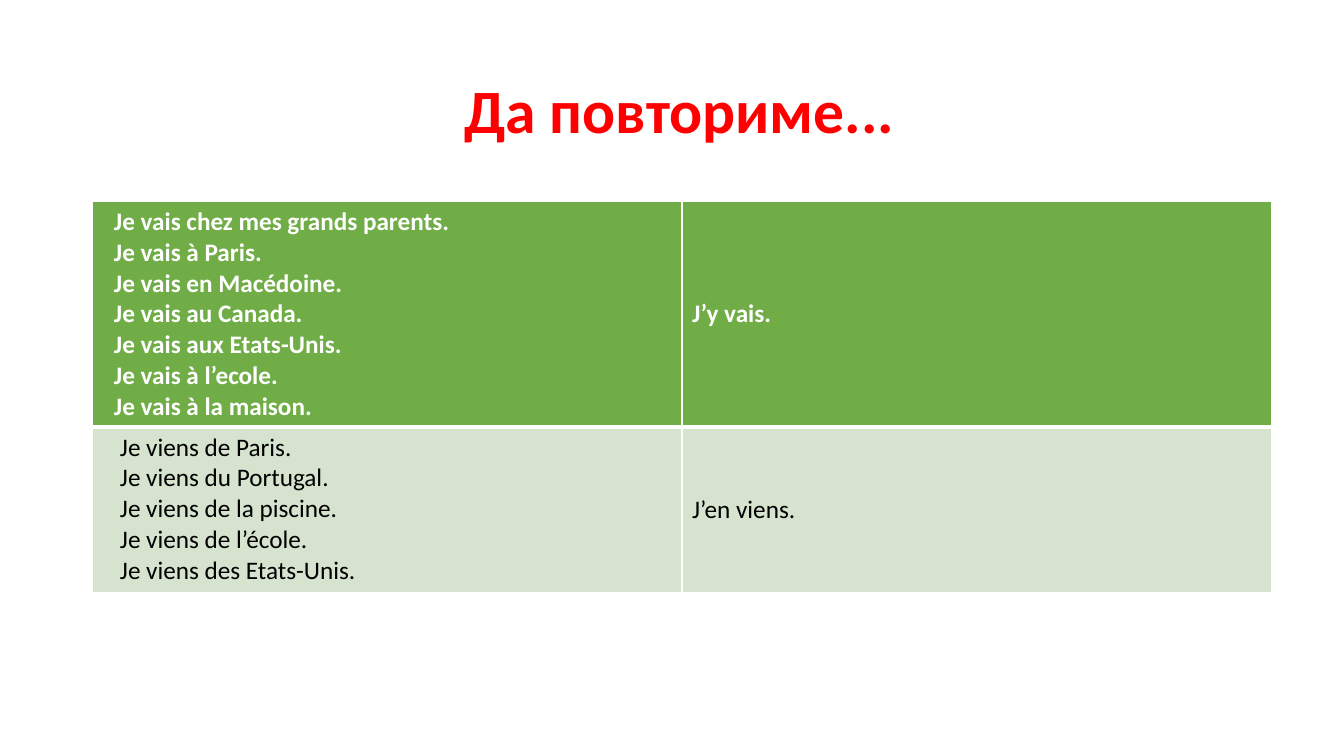
from dataclasses import dataclass

import pptx
import pptx.dml.color
import pptx.enum.text
import pptx.oxml
import pptx.oxml.ns
import pptx.util
from pptx.util import Inches


@dataclass(frozen=True)
class Theme:
    font: str = "Calibri"
    title_size: int = 44
    body_size: int = 18
    red: str = "FF0000"
    white: str = "FFFFFF"
    black: str = "000000"
    green: str = "70AD47"
    pale_green: str = "D5E3CF"


THEME = Theme()


def format_text(frame, size, color, bold, indent):
    """Format every paragraph of a text frame, with a left indent in inches."""
    for para in frame.paragraphs:
        para._p.get_or_add_pPr().set("marL", str(Inches(indent)))
        for span in para.runs:
            span.font.name = THEME.font
            span.font.size = pptx.util.Pt(size)
            span.font.bold = bold
            span.font.color.rgb = pptx.dml.color.RGBColor.from_string(color)


def add_borders(cell, widths):
    """Draw white cell borders; widths maps left, right, top, bottom tags to points."""
    properties = cell._tc.get_or_add_tcPr()
    for position, (side, width) in enumerate(widths.items()):
        border = pptx.oxml.parse_xml(
            f'<a:{side} {pptx.oxml.ns.nsdecls("a")} w="{pptx.util.Pt(width)}">'
            f'<a:solidFill><a:srgbClr val="{THEME.white}"/></a:solidFill></a:{side}>'
        )
        properties.insert(position, border)


deck = pptx.Presentation()
deck.slide_width, deck.slide_height = Inches(13.33), Inches(7.5)
page = deck.slides.add_slide(deck.slide_layouts[5])

# Title
title = page.shapes.title
title.left, title.top = Inches(0.92), Inches(0.4)
title.width, title.height = Inches(11.5), Inches(1.45)
title.text_frame.text = "Да повториме..."
title.text_frame.vertical_anchor = pptx.enum.text.MSO_ANCHOR.MIDDLE
heading = title.text_frame.paragraphs[0]
heading.alignment = pptx.enum.text.PP_ALIGN.CENTER
heading.line_spacing = 0.9
format_text(title.text_frame, THEME.title_size, THEME.red, True, 0.14)

# Each row: sentences, short answer, height, indent, fill, text colour, bold, borders
going = [
    "Je vais chez mes grands parents.",
    "Je vais à Paris.",
    "Je vais en Macédoine.",
    "Je vais au Canada.",
    "Je vais aux Etats-Unis.",
    "Je vais à l’ecole.",
    "Je vais à la maison.",
]
coming = [
    "Je viens de Paris.",
    "Je viens du Portugal.",
    "Je viens de la piscine.",
    "Je viens de l’école.",
    "Je viens des Etats-Unis.",
]
rows = [
    (going, "J’y vais.", 2.22, 0.11, THEME.green, THEME.white, True,
     {"lnL": 1, "lnR": 1, "lnT": 1, "lnB": 3}),
    (coming, "J’en viens.", 1.64, 0.17, THEME.pale_green, THEME.black, False,
     {"lnL": 1, "lnR": 1, "lnT": 3, "lnB": 1}),
]

# Table
table = page.shapes.add_table(
    len(rows), 2, Inches(0.92), Inches(2), Inches(11.69), Inches(3.86)
).table
for row_index, (sentences, answer, height, indent, fill, color, bold, borders) in enumerate(rows):
    table.rows[row_index].height = Inches(height)
    for column, (text, left) in enumerate([("\n".join(sentences), indent), (answer, 0)]):
        cell = table.cell(row_index, column)
        cell.text_frame.text = text
        format_text(cell.text_frame, THEME.body_size, color, bold, left)
        cell.fill.solid()
        cell.fill.fore_color.rgb = pptx.dml.color.RGBColor.from_string(fill)
        add_borders(cell, borders)
    cell.vertical_anchor = pptx.enum.text.MSO_ANCHOR.MIDDLE

deck.save("out.pptx")
